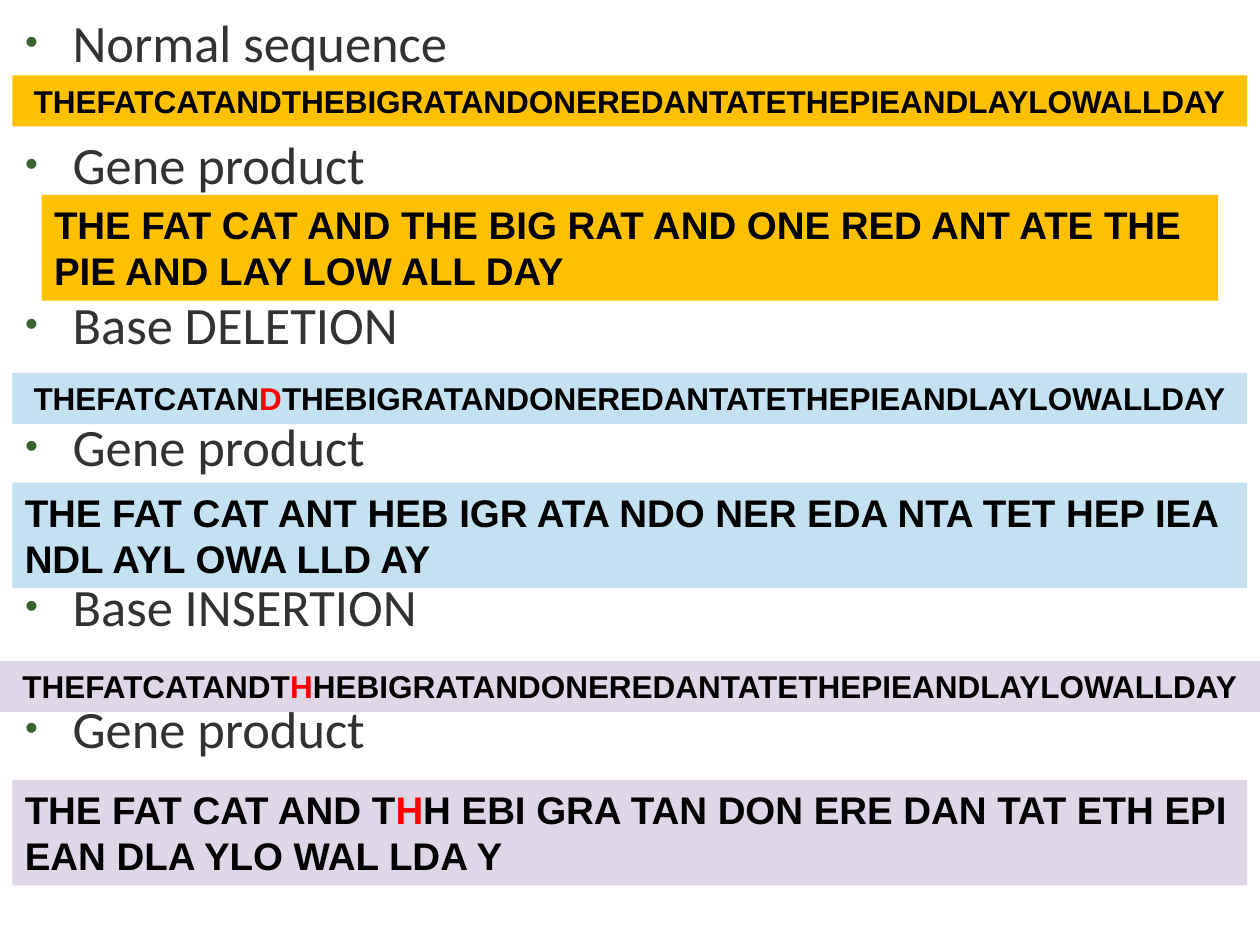
"""Build the slide on frameshift mutations caused by base deletion and insertion."""
from dataclasses import dataclass

from lxml.etree import SubElement
from pptx import Presentation
from pptx.dml.color import RGBColor
from pptx.enum.shapes import MSO_SHAPE as Preset
from pptx.enum.text import MSO_ANCHOR as Anchor
from pptx.enum.text import MSO_AUTO_SIZE as AutoSize
from pptx.enum.text import PP_ALIGN as Align
from pptx.oxml.ns import qn
from pptx.util import Cm, Pt

AMBER = RGBColor(0xFF, 0xC0, 0x00)
BLUE = RGBColor(0xC4, 0xE1, 0xF2)
LILAC = RGBColor(0xDF, 0xD7, 0xE7)
BLACK = RGBColor(0x00, 0x00, 0x00)
RED = RGBColor(0xFF, 0x00, 0x00)
GREY = RGBColor(0x32, 0x32, 0x32)
GREEN = RGBColor(0x3A, 0x63, 0x31)

MUTATION_MARK = "|"
SEQUENCE_HEIGHT = 1.03
PRODUCT_HEIGHT = 2.13
HEADINGS = [
    "Normal sequence", "Gene product",
    "Base DELETION", "Gene product",
    "Base INSERTION", "Gene product",
]
SEQUENCE_GAP = 55.5
PRODUCT_GAP = 33.7


@dataclass
class Band:
    """A coloured band whose mutated base stands between mutation marks."""
    lines: list[str]
    top: float
    color: RGBColor
    left: float = 0.25
    width: float = 24.89
    is_product: bool = False
    wrap: bool = True


BANDS = [
    Band(["THEFATCATANDTHEBIGRATANDONEREDANTATETHEPIEANDLAYLOWALLDAY"], 1.52, AMBER),
    Band(["THE FAT CAT AND THE BIG RAT AND ONE RED ANT ATE THE", "PIE AND LAY LOW ALL DAY"],
         3.93, AMBER, left=0.84, width=23.72, is_product=True, wrap=False),
    Band(["THEFATCATAN|D|THEBIGRATANDONEREDANTATETHEPIEANDLAYLOWALLDAY"], 7.52, BLUE),
    Band(["THE FAT CAT ANT HEB IGR ATA NDO NER EDA NTA TET HEP IEA NDL AYL OWA LLD AY"],
         9.73, BLUE, is_product=True),
    Band(["THEFATCATANDT|H|HEBIGRATANDONEREDANTATETHEPIEANDLAYLOWALLDAY"],
         13.33, LILAC, left=0, width=25.4),
    Band(["THE FAT CAT AND T|H|H EBI GRA TAN DON ERE DAN TAT ETH EPI EAN DLA YLO WAL LDA Y"],
         15.72, LILAC, is_product=True),
]


def write_text(paragraph, text: str, *, size: float, font: str, color: RGBColor,
               bold: bool = False, align: Align = Align.LEFT, space_before: float = 0) -> None:
    """Write text into a paragraph, with the marked part in red."""
    paragraph.alignment = align
    paragraph.space_before = Pt(space_before)
    for index, part in enumerate(text.split(MUTATION_MARK)):
        run = paragraph.add_run()
        run.text = part
        run.font.name = font
        run.font.size = Pt(size)
        run.font.bold = bold
        run.font.color.rgb = RED if index % 2 else color


def add_bullet(paragraph) -> None:
    """Give a paragraph a small green bullet and a hanging indent."""
    properties = paragraph._p.get_or_add_pPr()
    properties.set("marL", str(Cm(0.96)))
    properties.set("indent", str(-Cm(0.96)))
    bullet_color = SubElement(properties, qn("a:buClr"))
    SubElement(bullet_color, qn("a:srgbClr"), val=str(GREEN))
    SubElement(properties, qn("a:buSzPct"), val="70000")
    SubElement(properties, qn("a:buFont"), typeface="Arial")
    SubElement(properties, qn("a:buChar"), char="•")


def fill_headings(body) -> None:
    """Place the body placeholder and write the bulleted headings."""
    body.left, body.top, body.width, body.height = Cm(0.25), Cm(0), Cm(24.13), Cm(18.14)
    frame = body.text_frame
    frame.auto_size = AutoSize.NONE
    frame.vertical_anchor = Anchor.TOP
    frame.margin_top = Cm(0.2)
    for index, heading in enumerate(HEADINGS):
        paragraph = frame.add_paragraph() if index else frame.paragraphs[0]
        gap = PRODUCT_GAP if index % 2 else SEQUENCE_GAP
        write_text(paragraph, heading, size=30, font="Calibri", color=GREY,
                   space_before=gap if index else 0)
        add_bullet(paragraph)


def add_band(slide, band: Band) -> None:
    """Draw one band with its sequence or gene product."""
    height = PRODUCT_HEIGHT if band.is_product else SEQUENCE_HEIGHT
    shape = slide.shapes.add_shape(
        Preset.RECTANGLE, Cm(band.left), Cm(band.top), Cm(band.width), Cm(height))
    shape.shadow.inherit = False
    shape.fill.solid()
    shape.fill.fore_color.rgb = band.color
    shape.line.fill.background()
    frame = shape.text_frame
    frame.word_wrap = band.wrap
    frame.auto_size = AutoSize.SHAPE_TO_FIT_TEXT
    frame.vertical_anchor = Anchor.TOP
    for index, line in enumerate(band.lines):
        paragraph = frame.add_paragraph() if index else frame.paragraphs[0]
        write_text(paragraph, line, size=22 if band.is_product else 18, font="Arial",
                   color=BLACK, bold=True,
                   align=Align.LEFT if band.is_product else Align.CENTER)


def main() -> None:
    """Build and save the presentation."""
    presentation = Presentation()
    presentation.slide_width, presentation.slide_height = Cm(25.4), Cm(19.05)
    slide = presentation.slides.add_slide(presentation.slide_layouts[1])
    title = slide.shapes.title._element
    title.getparent().remove(title)
    fill_headings(slide.placeholders[1])
    for band in BANDS:
        add_band(slide, band)
    presentation.save("out.pptx")


if __name__ == "__main__":
    main()
